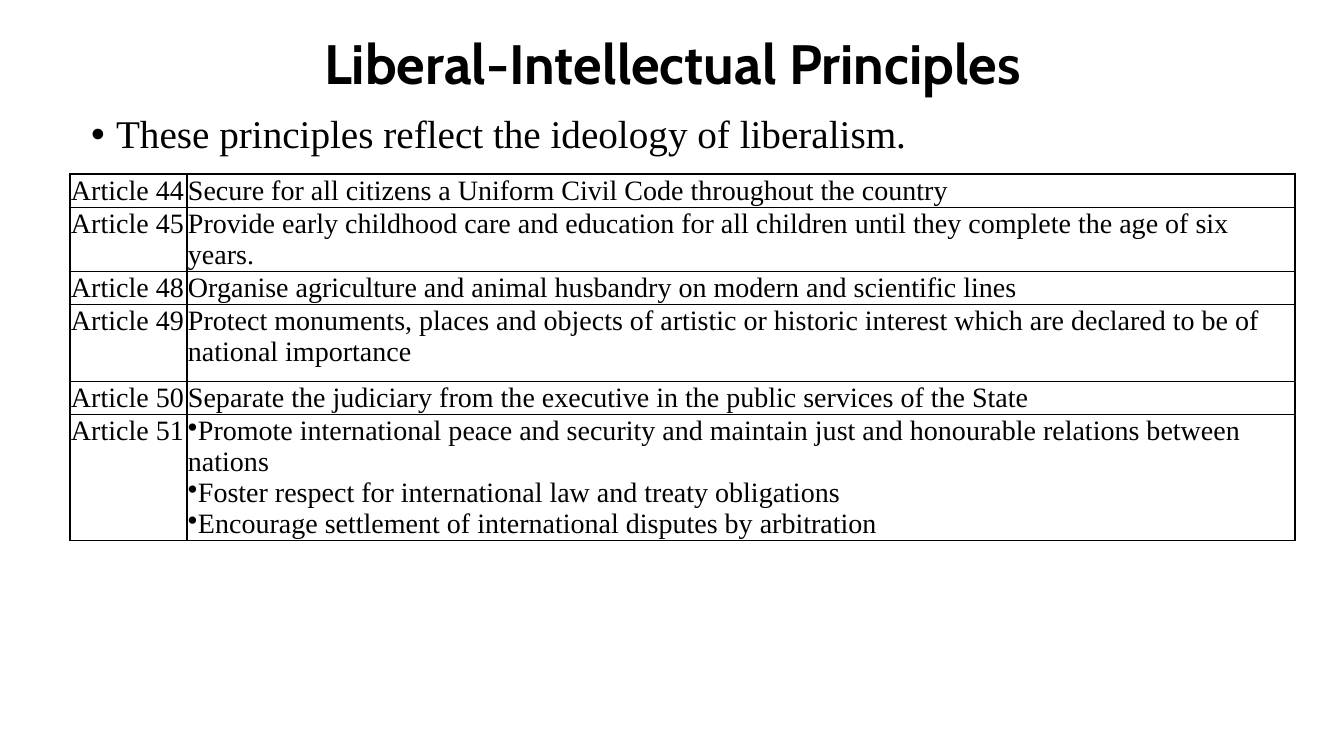
import dataclasses

import pptx
import pptx.dml.color
import pptx.enum.text
import pptx.oxml
import pptx.oxml.ns
import pptx.util

TITLE = "Liberal-Intellectual Principles"
LEAD = "These principles reflect the ideology of liberalism."
ROWS = [
    ("Article 44", ["Secure for all citizens a Uniform Civil Code throughout the country"], 21),
    ("Article 45", ["Provide early childhood care and education for all children until they complete the age of six years."], 39),
    ("Article 48", ["Organise agriculture and animal husbandry on modern and scientific lines"], 15),
    ("Article 49", ["Protect monuments, places and objects of artistic or historic interest which are declared to be of national importance"], 77),
    ("Article 50", ["Separate the judiciary from the executive in the public services of the State"], 31),
    ("Article 51", [
        "Promote international peace and security and maintain just and honourable relations between nations",
        "Foster respect for international law and treaty obligations",
        "Encourage settlement of international disputes by arbitration",
    ], 96),
]
PAGE = (1344, 756)
HEAD_BOX = (93, 40, 1159, 54)
LEAD_BOX = (81, 110, 1159, 79)
GRID_AT = (70, 174)
COLS = (117, 1108)
INSET = 1
HANG = 25


@dataclasses.dataclass(frozen=True)
class Theme:
    ink: str = "000000"
    head: str = "Cabin"
    body: str = "Times New Roman"
    big: float = 39.6
    mid: float = 28
    small: float = 20
    rule: float = 1


THEME = Theme()


def px(count):
    return pptx.util.Emu(round(count * 914400 / 100.8))


def place(shape, box):
    shape.left, shape.top, shape.width, shape.height = map(px, box)
    shape.text_frame.auto_size = pptx.enum.text.MSO_AUTO_SIZE.NONE


def bullet(para, hang=0):
    props = para._p.get_or_add_pPr()
    props.set("marL", str(px(hang)))
    props.set("indent", str(-px(hang)))
    mark = pptx.oxml.parse_xml(f'<a:buChar {pptx.oxml.ns.nsdecls("a")} char="•"/>')
    props.append(mark)


def write(para, text, face, size, bold=False):
    run = para.add_run()
    run.text = text
    run.font.name = face
    run.font.size = pptx.util.Pt(size)
    run.font.bold = bold
    run.font.color.rgb = pptx.dml.color.RGBColor.from_string(THEME.ink)


def frame(cell):
    props = cell._tc.get_or_add_tcPr()
    for side in ("lnL", "lnR", "lnT", "lnB"):
        props.append(pptx.oxml.parse_xml(
            f'<a:{side} {pptx.oxml.ns.nsdecls("a")} w="{pptx.util.Pt(THEME.rule)}">'
            f'<a:solidFill><a:srgbClr val="{THEME.ink}"/></a:solidFill></a:{side}>'))
    cell.fill.background()
    cell.margin_left = cell.margin_right = px(INSET)
    cell.margin_top = cell.margin_bottom = px(INSET)


def fill(cell, lines):
    frame(cell)
    for num, line in enumerate(lines):
        text = cell.text_frame
        para = text.add_paragraph() if num else text.paragraphs[0]
        if len(lines) > 1:
            bullet(para)
        write(para, line, THEME.body, THEME.small)


def main():
    deck = pptx.Presentation()
    deck.slide_width, deck.slide_height = map(px, PAGE)
    slide = deck.slides.add_slide(deck.slide_layouts[1])

    title, lead = slide.placeholders
    place(title, HEAD_BOX)
    title.text_frame.vertical_anchor = pptx.enum.text.MSO_ANCHOR.MIDDLE
    para = title.text_frame.paragraphs[0]
    para.alignment = pptx.enum.text.PP_ALIGN.CENTER
    para.line_spacing = 0.9
    write(para, TITLE, THEME.head, THEME.big, True)

    place(lead, LEAD_BOX)
    para = lead.text_frame.paragraphs[0]
    bullet(para, HANG)
    para.line_spacing = 0.9
    para.space_before = pptx.util.Pt(0)
    write(para, LEAD, THEME.body, THEME.mid)

    size = (sum(COLS), sum(row[2] for row in ROWS))
    grid = slide.shapes.add_table(len(ROWS), len(COLS), *map(px, GRID_AT + size)).table
    grid.first_row = grid.horz_banding = False
    for col, width in zip(grid.columns, COLS):
        col.width = px(width)
    for num, (label, lines, height) in enumerate(ROWS):
        grid.rows[num].height = px(height)
        fill(grid.cell(num, 0), [label])
        fill(grid.cell(num, 1), lines)

    deck.save("out.pptx")


if __name__ == "__main__":
    main()
